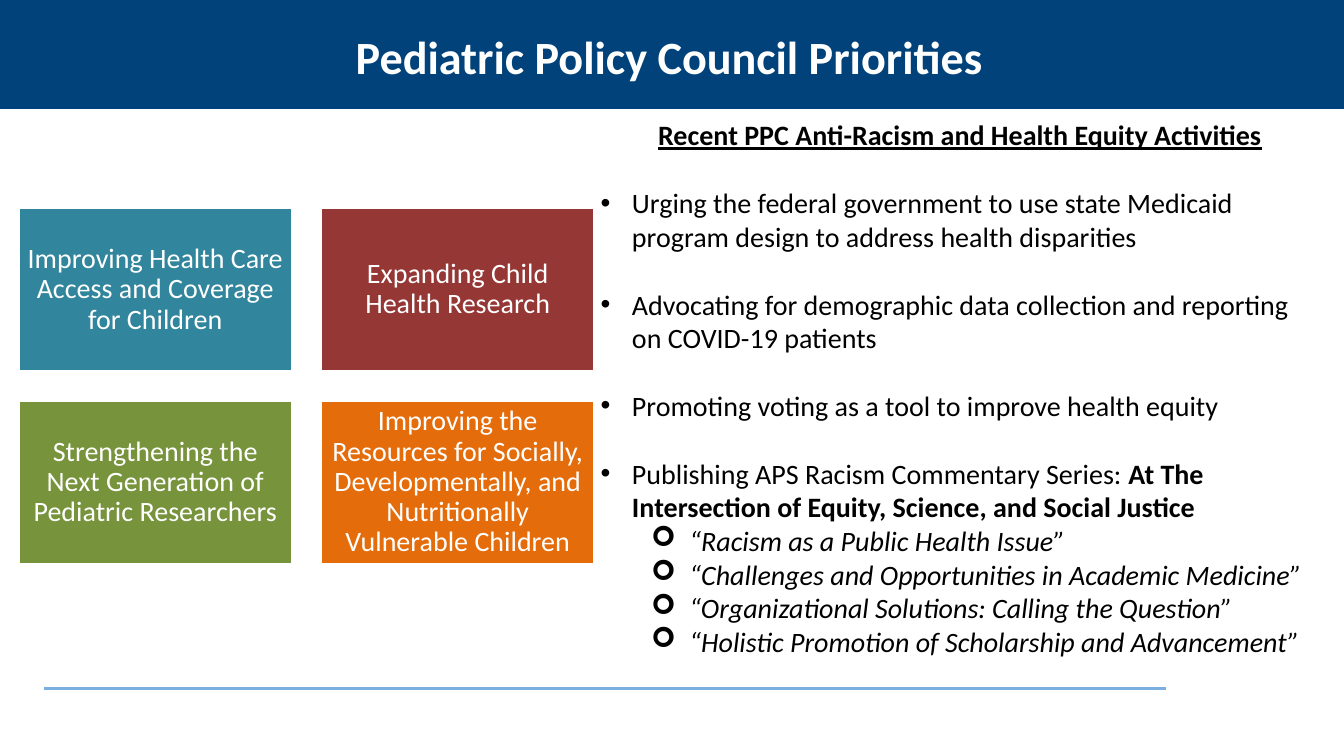
from lxml import etree
from pptx import Presentation
from pptx.dml.color import RGBColor
from pptx.enum.shapes import MSO_CONNECTOR, MSO_SHAPE
from pptx.enum.text import MSO_ANCHOR, PP_ALIGN
from pptx.oxml.ns import qn
from pptx.util import Inches, Pt

RECTANGLE = MSO_SHAPE.RECTANGLE
STRAIGHT = MSO_CONNECTOR.STRAIGHT
MIDDLE = MSO_ANCHOR.MIDDLE
CENTER = PP_ALIGN.CENTER

TITLE = "Pediatric Policy Council Priorities"
PRIORITIES = [
    ("Improving Health Care Access and Coverage for Children", "teal"),
    ("Expanding Child Health Research", "red"),
    ("Strengthening the Next Generation of Pediatric Researchers", "green"),
    ("Improving the Resources for Socially, Developmentally, and "
     "Nutritionally Vulnerable Children", "orange"),
]
HEADING = "Recent PPC Anti-Racism and Health Equity Activities"
# Each activity: plain text, bold ending
ACTIVITIES = [
    ("Urging the federal government to use state Medicaid program design "
     "to address health disparities", ""),
    ("Advocating for demographic data collection and reporting on "
     "COVID-19 patients", ""),
    ("Promoting voting as a tool to improve health equity", ""),
    ("Publishing APS Racism Commentary Series: ",
     "At The Intersection of Equity, Science, and Social Justice"),
]
COMMENTARIES = [
    "“Racism as a Public Health Issue”",
    "“Challenges and Opportunities in Academic Medicine”",
    "“Organizational Solutions: Calling the Question”",
    "“Holistic Promotion of Scholarship and Advancement”",
]

COLORS = {
    "navy": "01427A", "sky": "7BAFDF", "white": "FFFFFF", "black": "000000",
    "teal": "31859C", "red": "953735", "green": "77933C", "orange": "E46C0A",
}
FONT = "Calibri"
BODY_SIZE = 20
WIDTH, HEIGHT = 13.33, 7.5
GRID_LEFT, GRID_TOP, GRID_COLUMNS = 0.18, 2.06, 2
TILE_WIDTH, TILE_HEIGHT = 2.72, 1.63
TILE_GAP = 0.28


def color(name):
    return RGBColor.from_string(COLORS[name])


def set_font(paragraph, size, color_name, bold=False):
    font = paragraph.font
    font.name, font.size, font.bold = FONT, Pt(size), bold
    font.color.rgb = color(color_name)
    return font


def add_block(page, left, top, width, height, fill):
    block = page.shapes.add_shape(
        RECTANGLE, Inches(left), Inches(top), Inches(width), Inches(height))
    block.shadow.inherit = False
    block.fill.solid()
    block.fill.fore_color.rgb = color(fill)
    block.line.fill.background()
    return block


def add_text_frame(page, left, top, width, height):
    box = page.shapes.add_textbox(
        Inches(left), Inches(top), Inches(width), Inches(height))
    box.text_frame.word_wrap = True
    return box.text_frame


def add_bullet(paragraph, symbol, typeface, indent, hanging):
    properties = paragraph._p.get_or_add_pPr()
    properties.set("marL", str(Inches(indent)))
    properties.set("indent", str(-Inches(hanging)))
    etree.SubElement(properties, qn("a:buFont")).set("typeface", typeface)
    etree.SubElement(properties, qn("a:buChar")).set("char", symbol)


def add_title(page):
    add_block(page, 0, 0, WIDTH, 1.08, "navy")
    frame = add_text_frame(page, 2.14, -0.07, 9, 1.25)
    frame.vertical_anchor = MIDDLE
    para = frame.paragraphs[0]
    para.text = TITLE
    para.alignment = CENTER
    set_font(para, 33, "white", bold=True)


def add_priorities(page):
    for index, (label, fill) in enumerate(PRIORITIES):
        row, column = divmod(index, GRID_COLUMNS)
        tile = add_block(
            page,
            GRID_LEFT + column * (TILE_WIDTH + TILE_GAP),
            GRID_TOP + row * (TILE_HEIGHT + TILE_GAP),
            TILE_WIDTH, TILE_HEIGHT, fill)
        tile.line.color.rgb = color("white")
        tile.line.width = Pt(2)
        frame = tile.text_frame
        frame.word_wrap = True
        frame.vertical_anchor = MIDDLE
        frame.margin_left = frame.margin_right = Inches(0.08)
        frame.margin_top = frame.margin_bottom = Inches(0.08)
        para = frame.paragraphs[0]
        para.text = label
        para.alignment = CENTER
        para.line_spacing = 0.9
        set_font(para, BODY_SIZE, "white")


def add_activities(page):
    frame = add_text_frame(page, 5.86, 1.12, 7.32, 5.49)
    heading = frame.paragraphs[0]
    heading.text = HEADING
    heading.alignment = CENTER
    set_font(heading, BODY_SIZE, "black", bold=True).underline = True
    for plain, bold in ACTIVITIES:
        para = frame.add_paragraph()
        para.space_before = Pt(24.4)
        add_bullet(para, "•", "Arial", 0.31, 0.31)
        set_font(para, BODY_SIZE, "black")
        para.add_run().text = plain
        if bold:
            span = para.add_run()
            span.text = bold
            span.font.bold = True
    for commentary in COMMENTARIES:
        para = frame.add_paragraph()
        para.text = commentary
        para.level = 1
        add_bullet(para, "➢", "Wingdings", 0.88, 0.38)
        set_font(para, BODY_SIZE, "black").italic = True


def add_footer_rule(page):
    rule = page.shapes.add_connector(
        STRAIGHT, Inches(0.44), Inches(6.83), Inches(11.56), Inches(6.83))
    rule.line.color.rgb = color("sky")
    rule.line.width = Pt(2)
    etree.SubElement(rule._element.spPr, qn("a:effectLst"))


def main():
    deck = Presentation()
    deck.slide_width, deck.slide_height = Inches(WIDTH), Inches(HEIGHT)
    page = deck.slides.add_slide(deck.slide_layouts[6])
    add_footer_rule(page)
    add_title(page)
    add_priorities(page)
    add_activities(page)
    deck.save("out.pptx")


if __name__ == "__main__":
    main()
